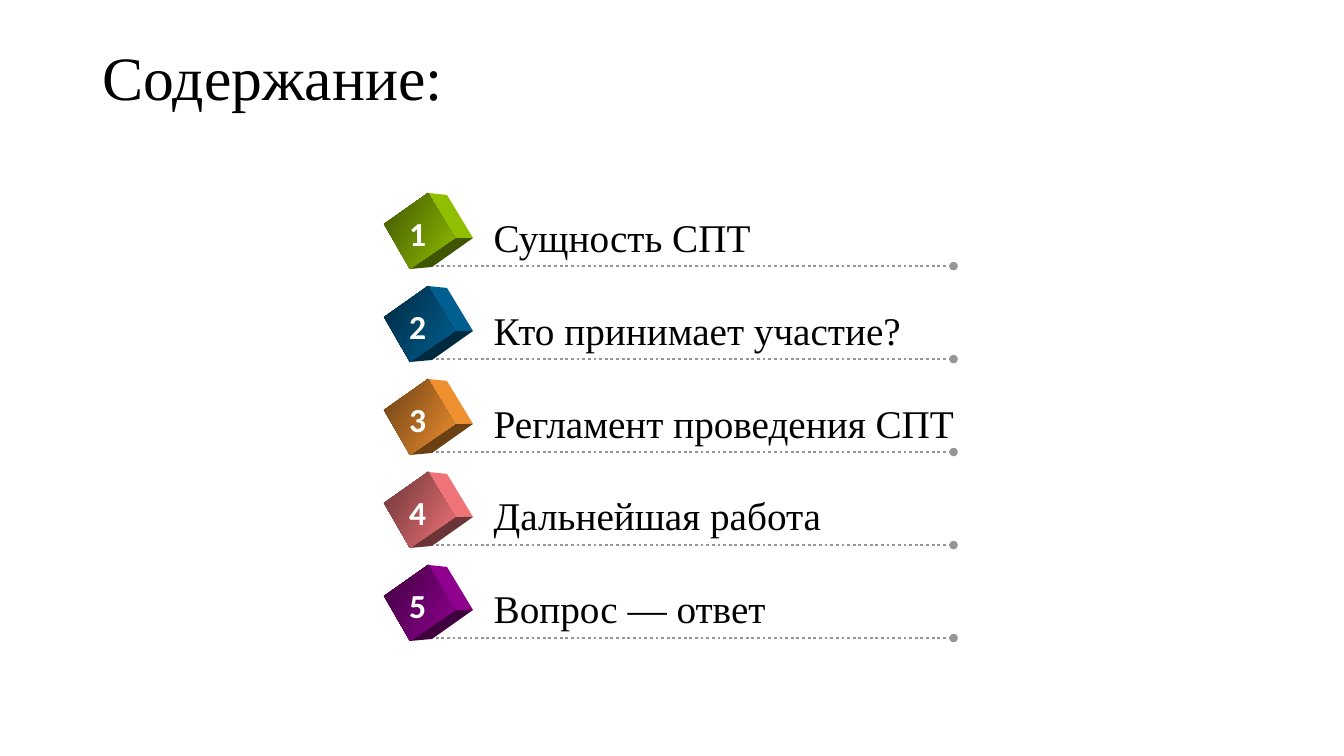
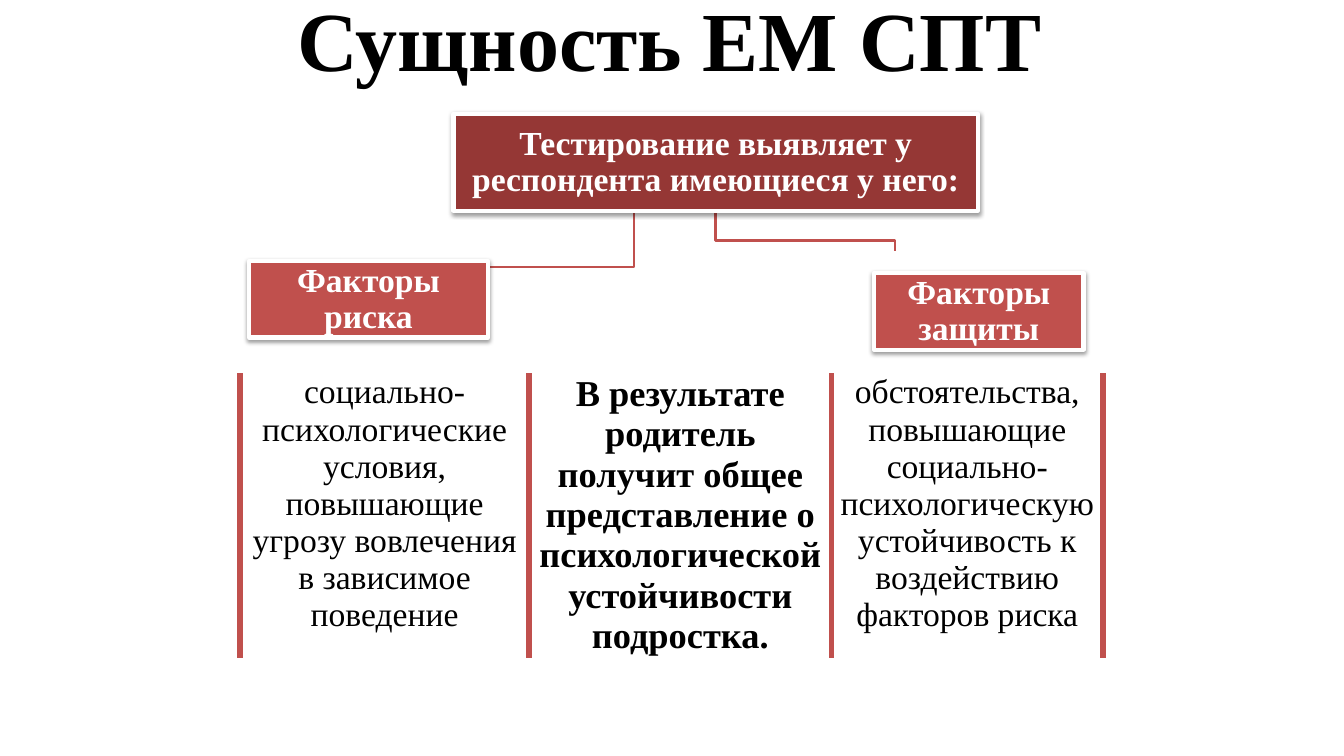
from pptx import Presentation
from pptx.dml.color import RGBColor
from pptx.enum.dml import MSO_LINE
from pptx.enum.shapes import MSO_CONNECTOR, MSO_SHAPE
from pptx.enum.text import MSO_ANCHOR, MSO_AUTO_SIZE, PP_ALIGN
from pptx.oxml import parse_xml
from pptx.oxml.ns import nsdecls, qn
from pptx.util import Inches, Pt

W, H = Inches(13.33), Inches(7.5)
SERIF, SANS = "Times New Roman", "Calibri"
BLACK, WHITE, GREY, RED, DARK_RED = "000000", "FFFFFF", "969696", "C0504D", "953735"
ROW_PITCH = 12.3
ITEMS = [
    ("Сущность СПТ", "8FBF00"),
    ("Кто принимает участие?", "005F90"),
    ("Регламент проведения СПТ", "EE8F30"),
    ("Дальнейшая работа", "EE7478"),
    ("Вопрос — ответ", "8F008F"),
]
CUBE = {
    "left": (28.57, 29.63), "top": (31.85, 25.53), "back": (33.26, 25.79),
    "right": (35.19, 31.48), "corner": (33.85, 31.5), "under": (32.14, 35.32),
    "bottom": (30.51, 35.58),
}
BOXES = [
    ("Тестирование выявляет у респондента имеющиеся у него:", (33.75, 15.07, 39, 12.8), DARK_RED),
    ("Факторы защиты", (65.03, 36.13, 15.6, 10.13), RED),
    ("Факторы риска", (18.53, 34.53, 17.78, 10.13), RED),
]
BRANCHES = [
    [(47.18, 27.87), (47.18, 35.33), (36.23, 35.33)],
    [(53.25, 27.87), (53.25, 31.87), (66.6, 31.87), (66.6, 33.2)],
]
COLUMNS = [
    ("социально-психологические условия, повышающие угрозу вовлечения в зависимое поведение",
     21.53, 24, False),
    ("В результате родитель получит общее представление о психологической устойчивости подростка.",
     22.5, 26, True),
    ("обстоятельства, повышающие социально-психологическую устойчивость к воздействию факторов риска",
     20.18, 24, False),
]


def x(share):
    """Turn a percentage of the slide width into a length."""
    return int(W * share / 100)


def y(share):
    """Turn a percentage of the slide height into a length."""
    return int(H * share / 100)


def place(left, top, width, height):
    """Turn a box in percentages into lengths."""
    return x(left), y(top), x(width), y(height)


def rgb(color):
    """Make a colour from a hex string."""
    return RGBColor.from_string(color)


def darken(color, share):
    """Scale each channel of a hex colour."""
    return "".join(f"{int(int(color[i:i + 2], 16) * share):02X}" for i in (0, 2, 4))


def apply(obj, formats):
    """Set every attribute named in a dict."""
    for name, value in formats.items():
        setattr(obj, name, value)


def write(tf, text, size, color=BLACK, bold=False, font=SERIF, frame=None, para=None):
    """Fill a text frame with one formatted paragraph."""
    apply(tf, frame or {})
    p = tf.paragraphs[0]
    apply(p, para or {})
    r = p.add_run()
    r.text = text
    apply(r.font, {"name": font, "size": Pt(size), "bold": bold})
    r.font.color.rgb = rgb(color)


def add_slide(prs, title, box, size, bold, align):
    """Add a title-only slide with its title placed and formatted."""
    s = prs.slides.add_slide(prs.slide_layouts[5])
    sp = s.shapes.title
    apply(sp, dict(zip(("left", "top", "width", "height"), place(*box))))
    write(sp.text_frame, title, size, bold=bold,
          frame={"word_wrap": True, "auto_size": MSO_AUTO_SIZE.NONE,
                 "vertical_anchor": MSO_ANCHOR.MIDDLE},
          para={"alignment": align, "line_spacing": 0.9})
    return s


def add_label(s, text, box, size, **style):
    """Add a one-line text box."""
    tf = s.shapes.add_textbox(*place(*box)).text_frame
    write(tf, text, size, frame={"word_wrap": False}, **style)


def add_outline(s, points, close):
    """Add a freeform through points given in percentages."""
    points = [(x(px), y(py)) for px, py in points]
    builder = s.shapes.build_freeform(*points[0])
    builder.add_line_segments(points[1:], close=close)
    sp = builder.convert_to_shape()
    sp.shadow.inherit = False
    return sp


def add_face(s, corners, dy, color, start=None):
    """Add one cube face, with a gradient when a start colour is given."""
    sp = add_outline(s, [(CUBE[c][0], CUBE[c][1] + dy) for c in corners.split()], True)
    sp.line.fill.background()
    if start:
        sp.fill.gradient()
        sp.fill.gradient_angle = 330
        for stop, shade in zip(sp.fill.gradient_stops, (start, color)):
            stop.color.rgb = rgb(shade)
    else:
        sp.fill.solid()
        sp.fill.fore_color.rgb = rgb(color)


def add_rule(s, left, right, top):
    """Add a dotted line that ends in a dot."""
    line = s.shapes.add_connector(MSO_CONNECTOR.STRAIGHT, x(left), y(top), x(right), y(top))
    line.line.color.rgb = rgb(GREY)
    apply(line.line, {"width": Pt(2), "dash_style": MSO_LINE.ROUND_DOT})
    spPr = line._element.spPr
    spPr.find(qn("a:ln")).append(parse_xml(f'<a:tailEnd {nsdecls("a")} type="oval"/>'))
    spPr.append(parse_xml(f'<a:effectLst {nsdecls("a")}/>'))


def add_item(s, index, text, color):
    """Add one numbered row of the contents."""
    dy = index * ROW_PITCH
    dark = darken(color, 0.45)
    add_rule(s, 31.58, 70.95, 35.2 + dy)
    add_face(s, "top back right corner", dy, color)
    add_face(s, "corner right under bottom", dy, dark)
    add_face(s, "left top corner bottom", dy, color, dark)
    add_label(s, text, (36, 27.5 + dy, 36.15, 7.6), 28)
    add_label(s, str(index + 1), (29.7, 27.5 + dy, 2.93, 6.67), 24,
              color=WHITE, bold=True, font=SANS)


def add_branch(s, points):
    """Add one elbow of the tree."""
    sp = add_outline(s, points, False)
    sp.fill.background()
    sp.line.color.rgb = rgb(RED)
    sp.line.width = Pt(2)


def add_box(s, text, box, color):
    """Add a white-edged box with a soft shadow."""
    sp = s.shapes.add_shape(MSO_SHAPE.RECTANGLE, *place(*box))
    sp.fill.solid()
    sp.fill.fore_color.rgb = rgb(color)
    sp.line.color.rgb = rgb(WHITE)
    sp.line.width = Pt(3)
    sp.shadow.inherit = False
    sp._element.spPr.find(qn("a:effectLst")).append(parse_xml(
        f'<a:outerShdw {nsdecls("a")} blurRad="40000" dist="20000" dir="5400000" rotWithShape="0">'
        f'<a:srgbClr val="{BLACK}"><a:alpha val="38000"/></a:srgbClr></a:outerShdw>'))
    frame = {f"margin_{side}": Inches(0.02) for side in ("left", "right", "top", "bottom")}
    frame.update(word_wrap=True, vertical_anchor=MSO_ANCHOR.MIDDLE)
    write(sp.text_frame, text, 24, WHITE, True, frame=frame,
          para={"alignment": PP_ALIGN.CENTER, "line_spacing": 0.9})


def set_side_borders(cell, color, width):
    """Draw the left and right borders of a cell."""
    tcPr = cell._tc.get_or_add_tcPr()
    for i, tag in enumerate(("lnL", "lnR")):
        tcPr.insert(i, parse_xml(
            f'<a:{tag} {nsdecls("a")} w="{Pt(width)}"><a:solidFill>'
            f'<a:srgbClr val="{color}"/></a:solidFill></a:{tag}>'))


def add_columns(s, left, top, height):
    """Add the one-row table of explanations."""
    width = sum(share for _, share, _, _ in COLUMNS)
    table = s.shapes.add_table(1, len(COLUMNS), *place(left, top, width, height)).table
    apply(table, {"first_row": False, "horz_banding": False})
    for i, (text, share, size, bold) in enumerate(COLUMNS):
        table.columns[i].width = x(share)
        cell = table.cell(0, i)
        apply(cell, {"margin_left": Inches(0.07), "margin_right": Inches(0.07),
                     "margin_top": 0, "margin_bottom": 0})
        cell.fill.background()
        set_side_borders(cell, RED, 4.5)
        write(cell.text_frame, text, size, bold=bold, para={"alignment": PP_ALIGN.CENTER})


def main():
    """Build both slides and save them."""
    prs = Presentation()
    apply(prs, {"slide_width": W, "slide_height": H})
    s = add_slide(prs, "Содержание:", (6.9, 5.33, 86.25, 10.53), 44, False, PP_ALIGN.LEFT)
    for i, (text, color) in enumerate(ITEMS):
        add_item(s, i, text, color)
    s = add_slide(prs, "Сущность ЕМ СПТ", (6.68, 0, 86.25, 11.73), 60, True, PP_ALIGN.CENTER)
    for points in BRANCHES:
        add_branch(s, points)
    for text, box, color in BOXES:
        add_box(s, text, box, color)
    add_columns(s, 17.85, 49.47, 37.5)
    prs.save("out.pptx")


if __name__ == "__main__":
    main()
